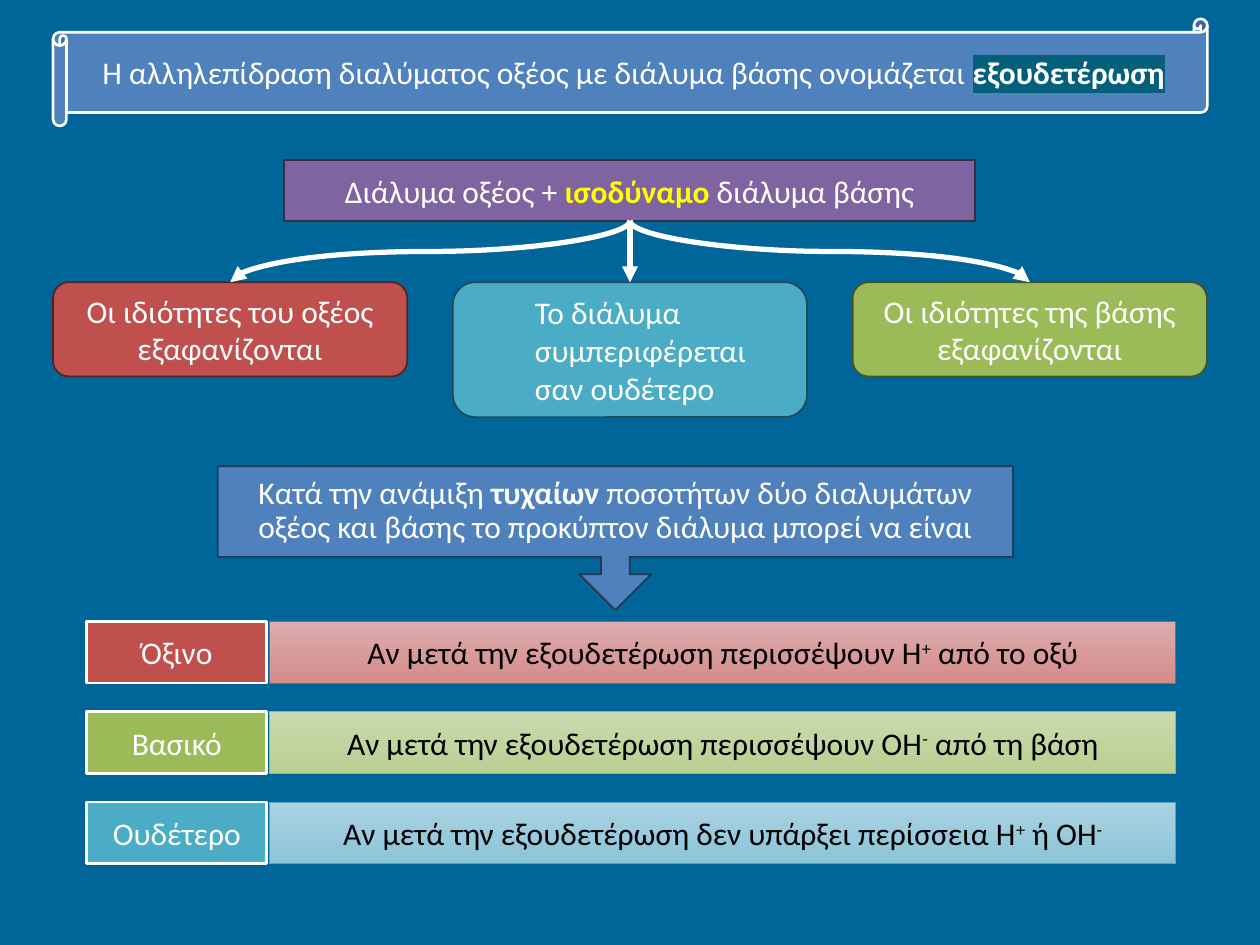
"""Build a slide on the neutralisation of acids and bases."""
from lxml import etree
from pptx import Presentation
from pptx.dml.color import RGBColor
from pptx.enum.shapes import MSO_CONNECTOR, MSO_SHAPE
from pptx.enum.text import MSO_ANCHOR, PP_ALIGN
from pptx.oxml.ns import qn
from pptx.util import Cm, Pt

RECTANGLE, ROUNDED = MSO_SHAPE.RECTANGLE, MSO_SHAPE.ROUNDED_RECTANGLE
SCROLL, CALLOUT = MSO_SHAPE.HORIZONTAL_SCROLL, MSO_SHAPE.DOWN_ARROW_CALLOUT
STRAIGHT, CURVE = MSO_CONNECTOR.STRAIGHT, MSO_CONNECTOR.CURVE
CENTER, LEFT, MIDDLE = PP_ALIGN.CENTER, PP_ALIGN.LEFT, MSO_ANCHOR.MIDDLE

WHITE, BLACK, BACKGROUND = "FFFFFF", "000000", "006699"
BLUE, PURPLE, RED, GREEN, TEAL = "4F81BD", "8064A2", "C0504D", "9BBB59", "4BACC6"
BOLD = {"bold": True}
YELLOW = {"bold": True, "color": "FFFF00"}
MARKED = {"bold": True, "highlight": "045F7A"}
RAISED = {"raised": True}

TITLE = [("Η αλληλεπίδραση διαλύματος οξέος με διάλυμα βάσης ονομάζεται ", {}),
         ("εξουδετέρωση", MARKED)]
MIXTURE = [("Διάλυμα οξέος + ", {}), ("ισοδύναμο", YELLOW), (" διάλυμα βάσης", {})]
EFFECTS = [
    ("Οι ιδιότητες του οξέος εξαφανίζονται", RED, "542322", 1.9),
    ("Το διάλυμα συμπεριφέρεται σαν ουδέτερο", TEAL, "214B57", 2.72),
    ("Οι ιδιότητες της βάσης εξαφανίζονται", GREEN, "445227", 1.9),
]
RANDOM_MIX = [("Κατά την ανάμιξη ", {}), ("τυχαίων", BOLD),
              (" ποσοτήτων δύο διαλυμάτων οξέος και βάσης το προκύπτον "
               "διάλυμα μπορεί να είναι", {})]
OUTCOMES = [
    ("Όξινο", RED, ("DDACAB", "D48D8B"),
     [("Αν μετά την εξουδετέρωση περισσέψουν Η", {}), ("+", RAISED),
      (" από το οξύ", {})]),
    ("Βασικό", GREEN, ("CADAAF", "B9D091"),
     [("Αν μετά την εξουδετέρωση περισσέψουν ΟΗ", {}), ("-", RAISED),
      (" από τη βάση", {})]),
    ("Ουδέτερο", TEAL, ("AAD2E1", "8BC5D9"),
     [("Αν μετά την εξουδετέρωση δεν υπάρξει περίσσεια Η", {}), ("+", RAISED),
      (" ή ΟΗ", {}), ("-", RAISED)]),
]

MIXTURE_BOTTOM, EFFECT_TOP, EFFECT_WIDTH = 4.45, 5.69, 7.14
EFFECT_LEFT, EFFECT_STEP = 1.07, 8.06
OUTCOME_TOP, OUTCOME_STEP, OUTCOME_HEIGHT = 12.53, 1.82, 1.24


def rgb(value):
    return RGBColor.from_string(value)


def write(paragraph, spans, color):
    for text, style in spans:
        span = paragraph.add_run()
        span.text = text
        span.font.size = Pt(18)
        span.font.bold = style.get("bold", False)
        span.font.color.rgb = rgb(style.get("color", color))
        span.font.name = "Calibri"
        properties = span.font._element
        if "raised" in style:
            properties.set("baseline", "30000")
        if "highlight" in style:
            highlight = etree.Element(qn("a:highlight"))
            etree.SubElement(highlight, qn("a:srgbClr"), val=style["highlight"])
            properties.find(qn("a:solidFill")).addnext(highlight)


def add_box(page, kind, place, fill, line, width, spans, color=WHITE):
    box = page.shapes.add_shape(kind, *map(Cm, place))
    box.shadow.inherit = False
    if isinstance(fill, tuple):
        box.fill.gradient()
        box.fill.gradient_angle = 270
        for stop, shade in zip(box.fill.gradient_stops, fill):
            stop.color.rgb = rgb(shade)
    else:
        box.fill.solid()
        box.fill.fore_color.rgb = rgb(fill)
    box.line.color.rgb = rgb(line)
    box.line.width = Pt(width)
    box.text_frame.word_wrap = True
    box.text_frame.vertical_anchor = MIDDLE
    paragraph = box.text_frame.paragraphs[0]
    paragraph.alignment = CENTER
    write(paragraph, spans, color)
    return box


def add_arrow(page, start_x, start_y, end_x, end_y):
    run, drop = end_x - start_x, end_y - start_y
    kind, ends, turn = STRAIGHT, (start_x, start_y, end_x, end_y), 0
    if run:
        side = -1 if run < 0 else 1
        middle_x, middle_y = (start_x + end_x) / 2, (start_y + end_y) / 2
        half_drop, half_run = side * drop / 2, abs(run) / 2
        ends = (middle_x + half_drop, middle_y - half_run,
                middle_x - half_drop, middle_y + half_run)
        kind, turn = CURVE, 90 if run < 0 else 270
    arrow = page.shapes.add_connector(kind, *map(Cm, ends))
    arrow.line.color.rgb = rgb(WHITE)
    arrow.line.width = Pt(3)
    properties = arrow._element.spPr
    if turn:
        properties.find(qn("a:xfrm")).set("rot", str(turn * 60000))
    etree.SubElement(properties.find(qn("a:ln")), qn("a:tailEnd"), type="triangle")
    etree.SubElement(properties, qn("a:effectLst"))


def main():
    deck = Presentation()
    deck.slide_width, deck.slide_height = Cm(25.4), Cm(19.05)
    page = deck.slides.add_slide(deck.slide_layouts[6])
    page.background.fill.solid()
    page.background.fill.fore_color.rgb = rgb(BACKGROUND)

    add_box(page, SCROLL, (1.07, 0.38, 23.27, 2.16), BLUE, WHITE, 1.5, TITLE)
    add_box(page, RECTANGLE, (5.72, 3.23, 13.94, 1.22), PURPLE, "382C47", 1, MIXTURE)

    effects = []
    for index, (text, fill, line, height) in enumerate(EFFECTS):
        left = EFFECT_LEFT + index * EFFECT_STEP
        place = (left, EFFECT_TOP, EFFECT_WIDTH, height)
        effects.append(add_box(page, ROUNDED, place, fill, line, 1, [(text, {})]))
        add_arrow(page, 12.7, MIXTURE_BOTTOM,
                  round(left + EFFECT_WIDTH / 2, 2), EFFECT_TOP)
    neutral = effects[1].text_frame.paragraphs[0]
    neutral.alignment = LEFT
    neutral.level = 1
    neutral._p.get_or_add_pPr().set("marL", str(Cm(1.27)))
    neutral._p.get_or_add_pPr().set("indent", "0")

    callout = add_box(page, CALLOUT, (4.39, 9.4, 16.03, 2.9), BLUE, "233953", 1,
                      RANDOM_MIX)
    for index, value in enumerate((0.2, 0.25, 0.25, 0.63)):
        callout.adjustments[index] = value
    callout.text_frame.paragraphs[0].line_spacing = 0.9

    for index, (label, fill, shades, spans) in enumerate(OUTCOMES):
        top = OUTCOME_TOP + index * OUTCOME_STEP
        add_box(page, RECTANGLE, (1.75, top, 3.63, OUTCOME_HEIGHT), fill, WHITE, 1.5,
                [(label, {})])
        add_box(page, RECTANGLE, (5.44, top, 18.26, OUTCOME_HEIGHT), shades, fill, 0.5,
                spans, BLACK)

    deck.save("out.pptx")


if __name__ == "__main__":
    main()
